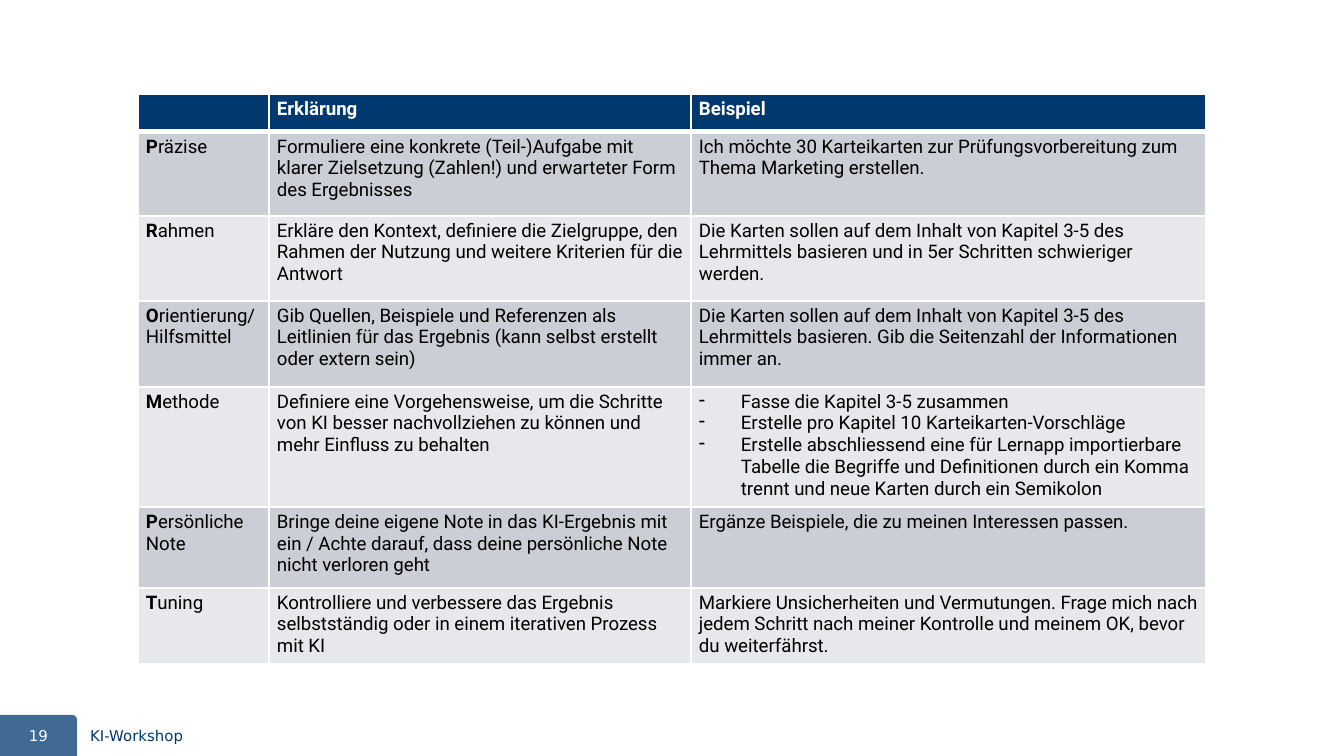
"""Build the KI-Workshop slide with the PROMPT method table."""
import lxml.etree
import pptx
import pptx.dml.color
import pptx.enum.shapes
import pptx.enum.text
import pptx.oxml.ns
import pptx.util

PX = 914400 / 134.4
COLORS = {"navy": "00386F", "white": "FFFFFF", "black": "000000",
          "dark": "CCCED5", "light": "E7E8EB"}
qn = pptx.oxml.ns.qn


def px(n):
    return pptx.util.Emu(round(n * PX))


def add_run(p, text, size, name, color, bold=False):
    r = p.add_run()
    r.text = text
    for key, value in {"size": pptx.util.Pt(size), "name": name, "bold": bold}.items():
        setattr(r.font, key, value)
    r.font.color.rgb = pptx.dml.color.RGBColor.from_string(COLORS[color])


prs = pptx.Presentation()
prs.slide_width, prs.slide_height = px(1344), px(756)
s = prs.slides.add_slide(prs.slide_layouts[6])

sp = s.shapes.add_shape(pptx.enum.shapes.MSO_SHAPE.ROUND_1_RECTANGLE,
                        px(0), px(715), px(77), px(41))
sp.adjustments[0] = 0.11
sp.shadow.inherit = False
sp.fill.solid()
sp.fill.fore_color.rgb = pptx.dml.color.RGBColor.from_string(COLORS["navy"])
sp.line.fill.background()
clr = sp.fill._xPr.find(".//" + qn("a:srgbClr"))
lxml.etree.SubElement(clr, qn("a:alpha"), val="75000")

align = pptx.enum.text.PP_ALIGN
for text, left, width, color, alignment in [
    ("KI-Workshop", 77, 613, "navy", align.LEFT),
    ("19", 0, 77, "white", align.CENTER),
]:
    tf = s.shapes.add_textbox(px(left), px(720), px(width), px(31)).text_frame
    tf.word_wrap = True
    tf.vertical_anchor = pptx.enum.text.MSO_ANCHOR.MIDDLE
    p = tf.paragraphs[0]
    p.alignment = alignment
    add_run(p, text, 8, "DejaVu Sans", color)

rows = [
    ("", "Erklärung", ["Beispiel"]),
    ("Präzise",
     "Formuliere eine konkrete (Teil-)Aufgabe mit klarer Zielsetzung (Zahlen!) "
     "und erwarteter Form des Ergebnisses",
     ["Ich möchte 30 Karteikarten zur Prüfungsvorbereitung zum Thema Marketing erstellen."]),
    ("Rahmen",
     "Erkläre den Kontext, definiere die Zielgruppe, den Rahmen der Nutzung "
     "und weitere Kriterien für die Antwort",
     ["Die Karten sollen auf dem Inhalt von Kapitel 3-5 des Lehrmittels basieren "
      "und in 5er Schritten schwieriger werden."]),
    ("Orientierung/ Hilfsmittel",
     "Gib Quellen, Beispiele und Referenzen als Leitlinien für das Ergebnis "
     "(kann selbst erstellt oder extern sein)",
     ["Die Karten sollen auf dem Inhalt von Kapitel 3-5 des Lehrmittels basieren. "
      "Gib die Seitenzahl der Informationen immer an."]),
    ("Methode",
     "Definiere eine Vorgehensweise, um die Schritte von KI besser "
     "nachvollziehen zu können und mehr Einfluss zu behalten",
     ["Fasse die Kapitel 3-5 zusammen",
      "Erstelle pro Kapitel 10 Karteikarten-Vorschläge",
      "Erstelle abschliessend eine für Lernapp importierbare Tabelle die Begriffe und "
      "Definitionen durch ein Komma trennt und neue Karten durch ein Semikolon"]),
    ("Persönliche Note",
     "Bringe deine eigene Note in das KI-Ergebnis mit ein / Achte darauf, "
     "dass deine persönliche Note nicht verloren geht",
     ["Ergänze Beispiele, die zu meinen Interessen passen."]),
    ("Tuning",
     "Kontrolliere und verbessere das Ergebnis selbstständig oder in einem "
     "iterativen Prozess mit KI",
     ["Markiere Unsicherheiten und Vermutungen. Frage mich nach jedem Schritt nach "
      "meiner Kontrolle und meinem OK, bevor du weiterfährst."]),
]
col_widths = [131, 422, 515]
row_heights = [38, 84, 85, 86, 119, 81, 74]

table = s.shapes.add_table(len(rows), len(col_widths), px(138), px(94),
                           px(sum(col_widths)), px(sum(row_heights))).table
for col, width in zip(table.columns, col_widths):
    col.width = px(width)
for row, height in zip(table.rows, row_heights):
    row.height = px(height)

margins = {"margin_left": 8, "margin_right": 8, "margin_top": 4, "margin_bottom": 4}
for i, (term, explanation, examples) in enumerate(rows):
    fill = "navy" if i == 0 else "dark" if i % 2 else "light"
    color = "white" if i == 0 else "black"
    for j, texts in enumerate([[term], [explanation], examples]):
        cell = table.cell(i, j)
        for key, value in margins.items():
            setattr(cell, key, px(value))
        tcPr = cell._tc.get_or_add_tcPr()
        for side in "LRTB":
            weight = 3 if (i, side) in [(0, "B"), (1, "T")] else 1
            ln = lxml.etree.SubElement(tcPr, qn("a:ln" + side),
                                       w=str(pptx.util.Pt(weight)))
            line_fill = lxml.etree.SubElement(ln, qn("a:solidFill"))
            lxml.etree.SubElement(line_fill, qn("a:srgbClr"), val=COLORS["white"])
        cell.fill.solid()
        cell.fill.fore_color.rgb = pptx.dml.color.RGBColor.from_string(COLORS[fill])
        tf = cell.text_frame
        for k, text in enumerate(texts):
            p = tf.add_paragraph() if k else tf.paragraphs[0]
            if len(texts) > 1:
                pPr = p._p.get_or_add_pPr()
                pPr.set("marL", str(px(42)))
                pPr.set("indent", str(px(-42)))
                lxml.etree.SubElement(pPr, qn("a:buChar"), char="-")
            if not text:
                lxml.etree.SubElement(p._p, qn("a:endParaRPr"), sz="1000")
            elif i and j == 0:
                add_run(p, text[0], 10, "Roboto", color, True)
                add_run(p, text[1:], 10, "Roboto", color)
            else:
                add_run(p, text, 10, "Roboto", color, i == 0)

prs.save("out.pptx")
